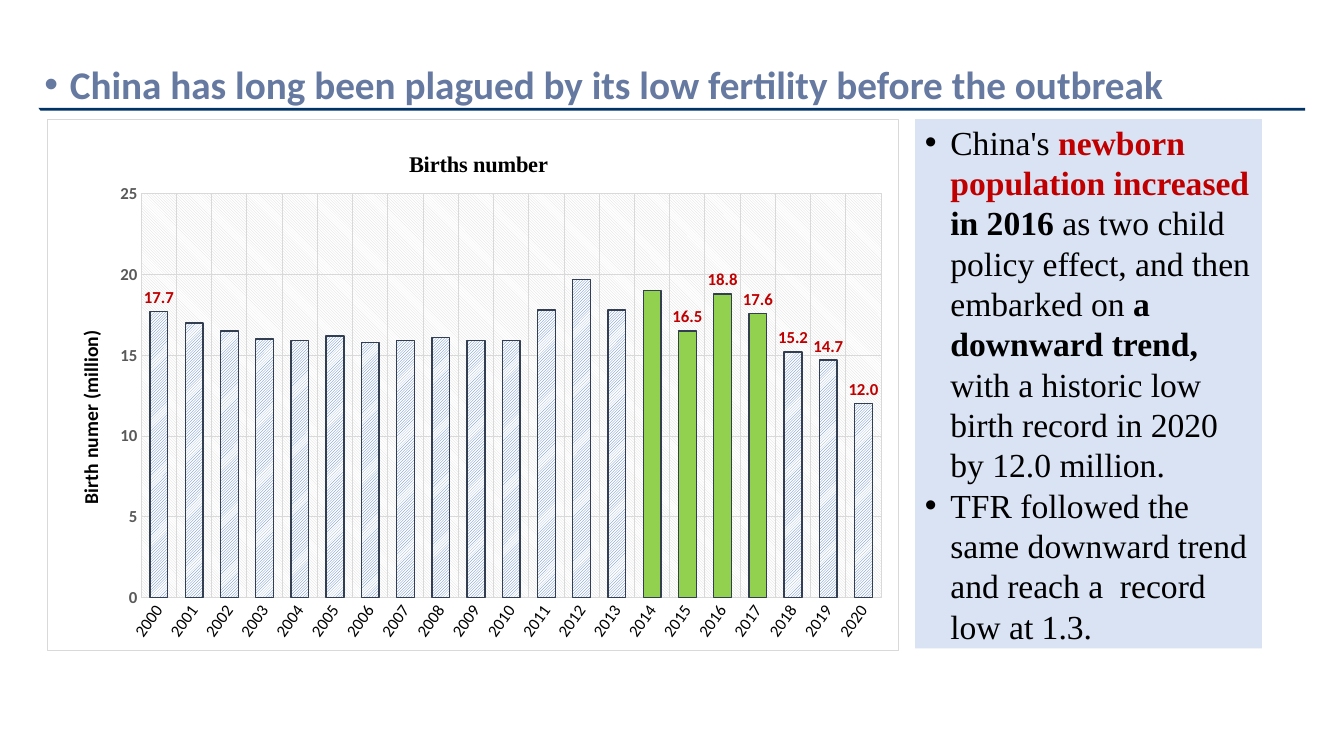
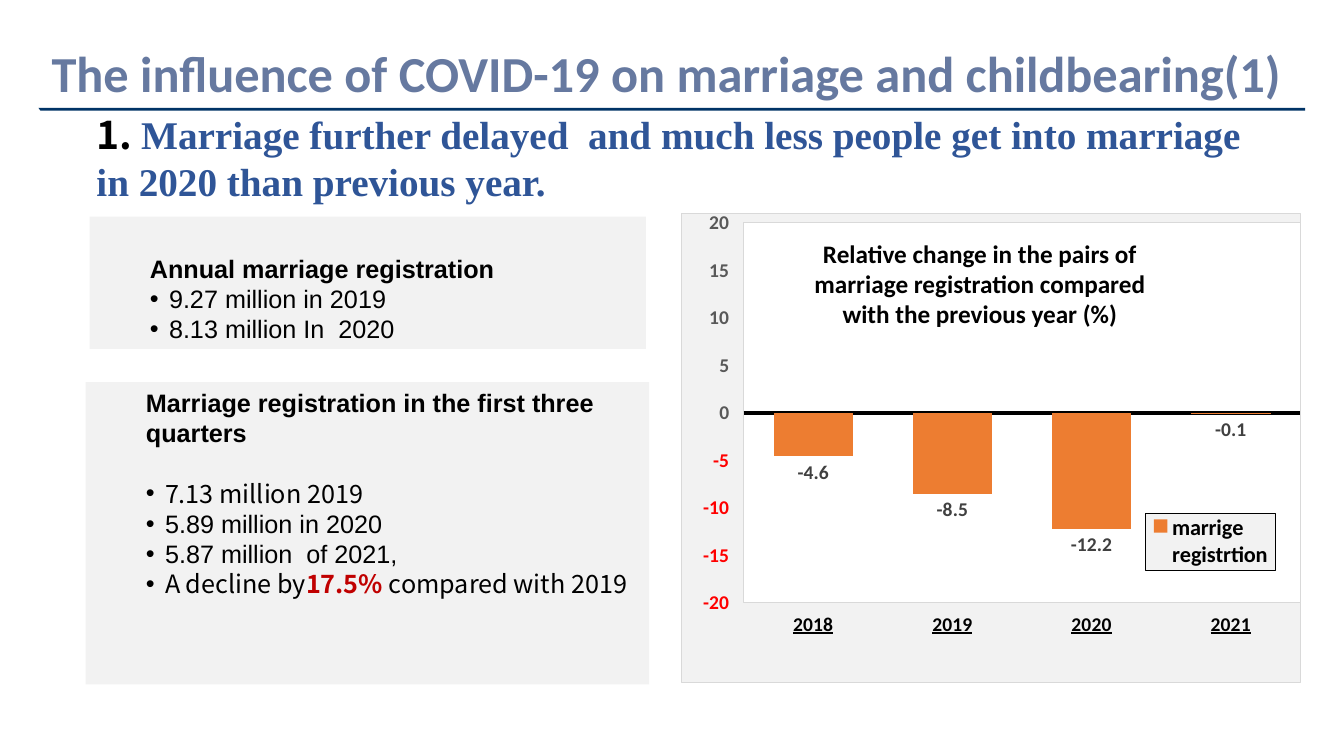
from dataclasses import dataclass

from lxml import etree
from pptx import Presentation
from pptx.chart.data import CategoryChartData
from pptx.dml.color import RGBColor
from pptx.enum.chart import (XL_CHART_TYPE, XL_LABEL_POSITION, XL_LEGEND_POSITION,
                             XL_TICK_LABEL_POSITION, XL_TICK_MARK)
from pptx.enum.dml import MSO_PATTERN
from pptx.enum.shapes import MSO_SHAPE
from pptx.enum.text import MSO_ANCHOR, MSO_AUTO_SIZE, PP_ALIGN
from pptx.oxml import parse_xml
from pptx.oxml.ns import nsdecls, qn
from pptx.util import Cm, Pt

COLOURS = {
    "title": "6679A0", "band": "003366", "black": "000000", "white": "FFFFFF",
    "red": "C00000", "heading": "2F5597", "panel blue": "DAE3F3",
    "panel grey": "F2F2F2", "grid": "D9D9D9", "axis text": "595959",
    "label": "404040", "bar": "4472C4", "bar line": "333F50",
    "highlight": "92D050", "orange": "ED7D31",
}
SERIF, SANS, CHART_FONT, CJK = "Times New Roman", "Arial", "Calibri", "Noto Sans CJK SC"


@dataclass
class Span:
    text: str
    bold: bool = None
    colour: str = None
    font: str = None


@dataclass
class Para:
    spans: list
    left: float = 0
    hang: float = 0
    gap: float = 0


def item(*spans, gap=0):
    """A bulleted line in one of the grey panels."""
    return Para(list(spans), 1.75, 0.48, gap)


BIRTHS_TITLE = [Para([Span("China has long been plagued by its low fertility before the outbreak")],
                     0.79, 0.64)]
BIRTHS_POINTS = [
    Para([Span("China's "),
          Span("newborn population increased ", True, "red"),
          Span("in 2016 ", True),
          Span("as two child policy effect, and then embarked on "),
          Span("a downward trend, ", True),
          Span(" with a historic low birth record in 2020 by 12.0 million.")], 0.64, 0.64),
    Para([Span("TFR followed the same downward trend and reach a  record low at 1.3.")],
         0.64, 0.64),
]
BIRTHS = dict(zip(range(2000, 2021), (
    17.7, 17, 16.5, 16, 15.9, 16.2, 15.8, 15.9, 16.1, 15.9, 15.9,
    17.8, 19.7, 17.8, 19, 16.5, 18.8, 17.6, 15.2, 14.7, 12)))
HIGHLIGHT_YEARS = range(2014, 2018)
UNLABELLED_YEARS = range(2001, 2015)

MARRIAGE_TITLE = [Para([Span("The influence of COVID-19 on marriage and childbearing(1)")])]
MARRIAGE_HEADING = [Para([
    Span("1. ", colour="black", font=CJK),
    Span("Marriage further delayed  and much less people get into marriage "
         "in 2020 than previous year.")], 0.15)]
ANNUAL = [
    Para([Span("Annual marriage registration", True)], 1.27),
    item(Span("9.27 million in 2019")),
    item(Span("8.13 million In  2020")),
]
QUARTERS = [
    Para([Span("Marriage registration in the first three quarters", True)], 1.27),
    item(Span("7.13 million 2019", font=CJK), gap=21.6),
    item(Span("5.89 million in 2020")),
    item(Span("5.87 million  of 2021,")),
    item(Span("A decline by", font=CJK), Span("17.5% ", True, "red", CJK),
         Span("compared with 2019", font=CJK)),
]
CHART_NOTE = [Para([Span("Relative change in the pairs of marriage registration "
                         "compared with the previous year (%)")])]
MARRIAGE_CHANGE = {2018: -4.6, 2019: -8.5, 2020: -12.2, 2021: -0.1}


def rgb(name):
    return RGBColor.from_string(COLOURS[name])


def place(shape, box):
    shape.left, shape.top, shape.width, shape.height = (Cm(v) for v in box)


def fill_shape(shape, colour):
    shape.fill.solid()
    shape.fill.fore_color.rgb = rgb(colour)


def style_font(font, size, colour, bold=False, name=CHART_FONT):
    font.size, font.bold, font.name = Pt(size), bold, name
    font.color.rgb = rgb(colour)


def set_indent(para, left, hang):
    """Set the left indent, with a bullet where the first line hangs."""
    props = para._p.get_or_add_pPr()
    props.set("marL", str(Cm(left)))
    props.set("indent", str(-Cm(hang)))
    if hang:
        etree.SubElement(props, qn("a:buFont")).set("typeface", "Arial")
        etree.SubElement(props, qn("a:buChar")).set("char", "•")
    else:
        etree.SubElement(props, qn("a:buNone"))


def write(shape, paras, size, font, colour="black", bold=False,
          anchor=MSO_ANCHOR.TOP, align=PP_ALIGN.LEFT, margins=(0.25, 0.13)):
    frame = shape.text_frame
    frame.word_wrap, frame.auto_size = True, MSO_AUTO_SIZE.NONE
    frame.vertical_anchor = anchor
    frame.margin_left = frame.margin_right = Cm(margins[0])
    frame.margin_top = frame.margin_bottom = Cm(margins[1])
    for index, content in enumerate(paras):
        para = frame.add_paragraph() if index else frame.paragraphs[0]
        set_indent(para, content.left, content.hang)
        para.alignment = align
        para.line_spacing = Pt(size * 1.2)
        para.space_before, para.space_after = Pt(content.gap), Pt(0)
        style_font(para.font, size, colour, bold, font)
        for part in content.spans:
            span = para.add_run()
            span.text = part.text
            if part.bold is not None:
                span.font.bold = part.bold
            if part.colour:
                span.font.color.rgb = rgb(part.colour)
            if part.font:
                span.font.name = part.font


def add_page(deck, title, size, box):
    """Add a page with its title and the band below it; return page and body."""
    page = deck.slides.add_slide(deck.slide_layouts[1])
    place(page.shapes.title, box)
    write(page.shapes.title, title, size, CHART_FONT, "title", True, margins=(0, 0))
    outline = page.shapes.build_freeform(Cm(0.97), Cm(2.72))
    outline.add_line_segments([(Cm(x), Cm(y)) for x, y in
                               ((32.89, 2.72), (32.89, 2.79), (1.02, 2.79))])
    band = outline.convert_to_shape()
    band.shadow.inherit = False
    fill_shape(band, "band")
    band.line.fill.background()
    return page, page.placeholders[1]


def add_panel(page, box, paras, anchor):
    panel = page.shapes.add_shape(MSO_SHAPE.RECTANGLE, *(Cm(v) for v in box))
    panel.shadow.inherit = False
    fill_shape(panel, "panel grey")
    panel.line.fill.background()
    write(panel, paras, 18, SANS, anchor=anchor)


def set_layout(element, x, y, w=None, h=None, inner=False):
    """Fix a chart part at fractions of the chart's size."""
    old = element.find(qn("c:layout"))
    if old is not None:
        element.remove(old)
    parts = ['<c:layoutTarget val="inner"/>'] if inner else []
    parts += [f'<c:{axis}Mode val="edge"/>' for axis in "xy"]
    parts += [f'<c:{key} val="{value}"/>' for key, value in
              zip("xywh", (x, y, w, h)) if value is not None]
    layout = parse_xml(f'<c:layout {nsdecls("c")}><c:manualLayout>{"".join(parts)}'
                       '</c:manualLayout></c:layout>')
    leads = [child for child in element if child.tag in (qn("c:tx"), qn("c:legendPos"))]
    element.insert(len(leads), layout)


def set_area(element, fill, line=None, pattern=None):
    """Fill and outline a chart part that has no public format."""
    def solid(name):
        return f'<a:solidFill><a:srgbClr val="{COLOURS[name]}"/></a:solidFill>'

    paint = solid(fill)
    if pattern:
        paint = (f'<a:pattFill prst="{pattern}"><a:fgClr><a:srgbClr val="{COLOURS["grid"]}"/>'
                 f'</a:fgClr><a:bgClr><a:srgbClr val="{COLOURS[fill]}"/></a:bgClr></a:pattFill>')
    edge = f'<a:ln w="9525">{solid(line)}</a:ln>' if line else '<a:ln><a:noFill/></a:ln>'
    props = parse_xml(f'<c:spPr {nsdecls("c", "a")}>{paint}{edge}</c:spPr>')
    text = element.find(qn("c:txPr"))
    if text is None:
        element.append(props)
    else:
        text.addprevious(props)


def add_columns(page, box, name, values, gap, background, plot_box, scale, pattern=None):
    """Add a one-series column chart; return the chart and its series."""
    data = CategoryChartData(number_format="0.0")
    data.categories = [str(year) for year in values]
    data.add_series(name, list(values.values()))
    chart = page.shapes.add_chart(XL_CHART_TYPE.COLUMN_CLUSTERED,
                                  *(Cm(v) for v in box), data).chart
    style_font(chart.font, 10, "black")
    chart.has_title = chart.has_legend = False
    plot = chart.plots[0]
    plot.gap_width, plot.vary_by_categories = gap, False
    for axis in (chart.category_axis, chart.value_axis):
        axis.major_tick_mark = axis.minor_tick_mark = XL_TICK_MARK.NONE
        axis.has_major_gridlines = False
    axis = chart.value_axis
    axis.minimum_scale, axis.maximum_scale = scale
    axis.major_unit = 5
    axis.format.line.fill.background()
    area = chart._chartSpace.chart.plotArea
    set_layout(area, *plot_box, inner=True)
    set_area(area, "white", "grid", pattern)
    set_area(chart._chartSpace, background, "grid")
    return chart, plot.series[0]


def label_values(series, size, colour):
    labels = series.data_labels
    labels.show_value = True
    labels.number_format, labels.number_format_is_linked = "#,##0.0", False
    labels.position = XL_LABEL_POSITION.OUTSIDE_END
    style_font(labels.font, size, colour, True)
    return labels


def set_axis_line(line, colour, width):
    line.color.rgb, line.width = rgb(colour), Pt(width)


def title_part(owner, holder, text, size, font, x, y):
    """Title a chart or an axis at a fixed place."""
    owner.has_title = True
    frame = holder(owner).text_frame
    frame.text = text
    style_font(frame.paragraphs[0].font, size, "black", True, font)
    set_layout(holder(owner)._element, x, y)
    return frame


def build_births(deck):
    page, body = add_page(deck, BIRTHS_TITLE, 28, (0.97, 1.52, 30.45, 1.19))
    place(body, (23.06, 3, 8.74, 13.34))
    fill_shape(body, "panel blue")
    write(body, BIRTHS_POINTS, 24, SERIF, anchor=MSO_ANCHOR.MIDDLE)

    chart, series = add_columns(page, (1.19, 3, 21.46, 13.41), "Series 1", BIRTHS, 98, "white",
                                (0.11, 0.14, 0.87, 0.76), (0, 25), "ltDnDiag")
    chart.plots[0].overlap = -43
    title_part(chart, lambda c: c.chart_title, "Births number", 16, SERIF, 0.42, 0.05)
    values, years = chart.value_axis, chart.category_axis
    frame = title_part(values, lambda a: a.axis_title, "Birth numer (million)", 14,
                       CHART_FONT, 0.03, 0.39)
    frame._txBody.find(qn("a:bodyPr")).set("rot", "-5400000")
    for axis in (values, years):
        axis.has_major_gridlines = True
        set_axis_line(axis.major_gridlines.format.line, "grid", 0.75)
    style_font(values.tick_labels.font, 12, "axis text", True)
    values.tick_labels.number_format = "0"
    values.tick_labels.number_format_is_linked = False
    style_font(years.tick_labels.font, 12, "black")
    years._element.find(qn("c:txPr")).find(qn("a:bodyPr")).set("rot", "-3240000")
    set_axis_line(years.format.line, "grid", 0.75)

    fill = series.format.fill
    fill.patterned()
    fill.pattern = MSO_PATTERN.DARK_UPWARD_DIAGONAL
    fill.fore_color.rgb, fill.back_color.rgb = rgb("bar"), rgb("white")
    set_axis_line(series.format.line, "bar line", 1)
    labels = label_values(series, 12, "red")
    hidden = 0
    for index, year in enumerate(BIRTHS):
        if year in HIGHLIGHT_YEARS:
            column = series.points[index].format
            fill_shape(column, "highlight")
            set_axis_line(column.line, "bar line", 1)
        if year in UNLABELLED_YEARS:
            labels._element.insert(hidden, parse_xml(
                f'<c:dLbl {nsdecls("c")}><c:idx val="{index}"/><c:delete val="1"/></c:dLbl>'))
            hidden += 1


def build_marriage(deck):
    page, body = add_page(deck, MARRIAGE_TITLE, 36, (1.3, 1.07, 31.19, 1.55))
    place(body, (2.03, 2.64, 29.82, 2.64))
    write(body, MARRIAGE_HEADING, 28, SERIF, "heading", True)
    add_panel(page, (2.26, 5.46, 14.02, 3.33), ANNUAL, MSO_ANCHOR.BOTTOM)
    add_panel(page, (2.16, 9.63, 14.2, 7.62), QUARTERS, MSO_ANCHOR.TOP)

    chart, series = add_columns(page, (17.17, 5.31, 15.65, 11.91), "marrige registrtion",
                                MARRIAGE_CHANGE, 75, "panel grey",
                                (0.1, 0.02, 0.9, 0.81), (-20, 20))
    fill_shape(series.format, "orange")
    label_values(series, 14, "label")
    values, years = chart.value_axis, chart.category_axis
    for axis, colour in ((values, "axis text"), (years, "black")):
        axis.tick_label_position = XL_TICK_LABEL_POSITION.LOW
        style_font(axis.tick_labels.font, 14, colour, True)
    years.tick_labels.font.underline = True
    set_axis_line(years.format.line, "black", 2.75)
    values.tick_labels.number_format = r"#,##0_ ;[Red]\-#,##0\ "
    values.tick_labels.number_format_is_linked = False
    chart.has_legend = True
    legend = chart.legend
    legend.position, legend.include_in_layout = XL_LEGEND_POSITION.BOTTOM, False
    style_font(legend.font, 16, "black", True)
    set_layout(legend._element, 0.75, 0.64, 0.21, 0.12)
    set_area(legend._element, "panel grey", "black")

    note = page.shapes.add_textbox(*(Cm(v) for v in (19.96, 5.87, 9.47, 2.57)))
    write(note, CHART_NOTE, 18, CHART_FONT, bold=True, align=PP_ALIGN.CENTER)


def main():
    deck = Presentation()
    deck.slide_width, deck.slide_height = Cm(33.87), Cm(19.05)
    build_births(deck)
    build_marriage(deck)
    deck.save("out.pptx")


if __name__ == "__main__":
    main()
